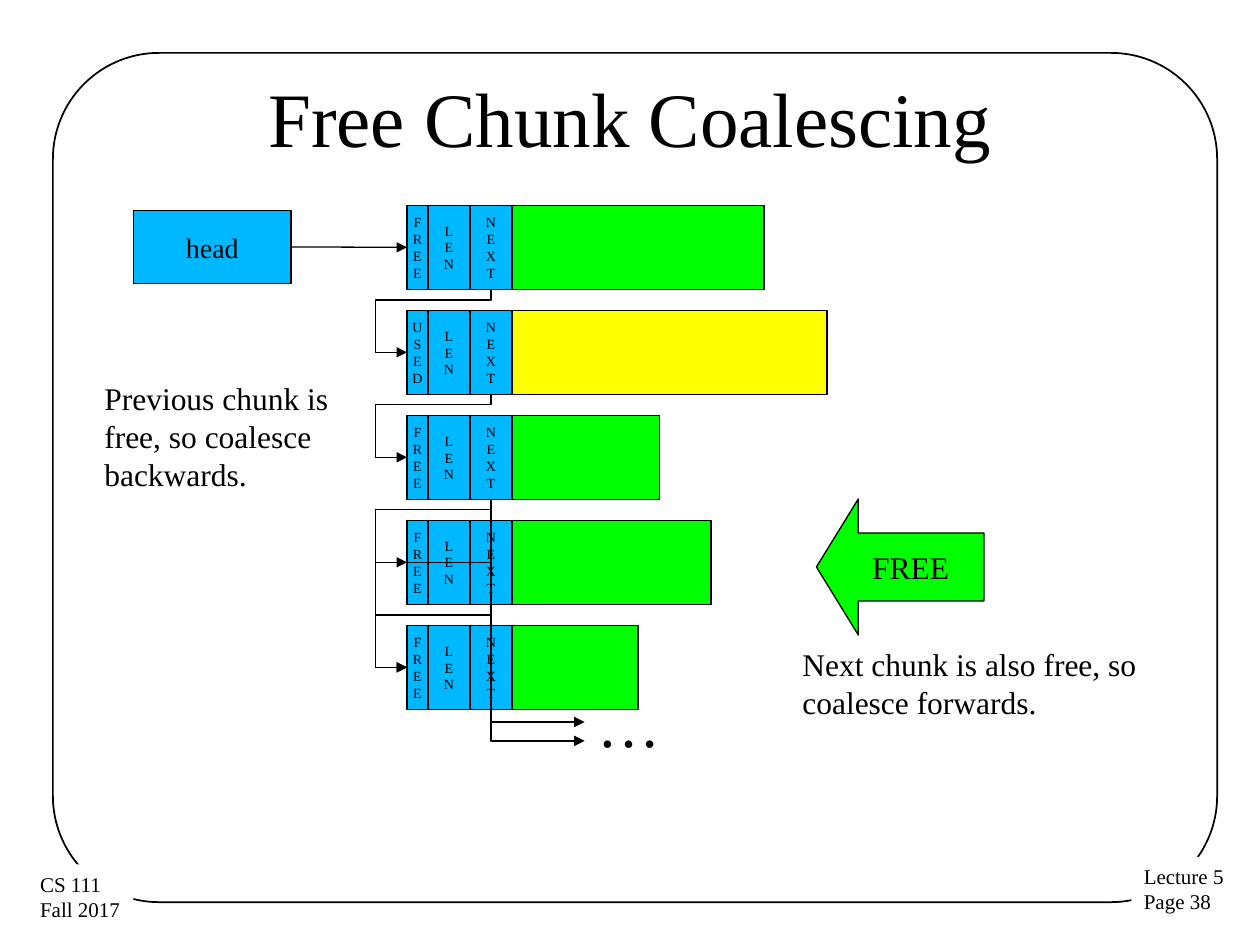
from lxml import etree
from pptx import Presentation
from pptx.dml.color import RGBColor
from pptx.enum.shapes import MSO_CONNECTOR as Link, MSO_SHAPE as Preset
from pptx.enum.text import MSO_ANCHOR as Anchor, PP_ALIGN as Align
from pptx.oxml.ns import qn
from pptx.util import Inches, Pt

COLORS = {"ink": "000000", "paper": "FFFFFF", "header": "00B8FF",
          "free": "00FF00", "used": "FFFF00"}
FONT = "Times New Roman"

deck = Presentation()
deck.slide_width, deck.slide_height = Inches(10), Inches(7.5)
page = deck.slides.add_slide(deck.slide_layouts[5])


def add_block(preset, bounds, fill, text="", size=8, align=Align.CENTER, line=0.75):
    """Add a shape with its text; fill or line may be None."""
    block = page.shapes.add_shape(preset, *map(Inches, bounds))
    block.shadow.inherit = False
    if fill:
        block.fill.solid()
        block.fill.fore_color.rgb = RGBColor.from_string(COLORS[fill])
    else:
        block.fill.background()
    if line:
        block.line.color.rgb = RGBColor.from_string(COLORS["ink"])
        block.line.width = Pt(line)
    else:
        block.line.fill.background()
    frame = block.text_frame
    frame.word_wrap = False
    frame.vertical_anchor = Anchor.MIDDLE
    frame.text = text
    for para in frame.paragraphs:
        para.alignment = align
        para.font.name, para.font.size = FONT, Pt(size)
        para.font.color.rgb = RGBColor.from_string(COLORS["ink"])
    return block


def finish_arrow(connector):
    """Give a connector a thin black line with an arrowhead and no shadow."""
    connector.line.color.rgb = RGBColor.from_string(COLORS["ink"])
    connector.line.width = Pt(0.75)
    properties = connector._element.spPr
    etree.SubElement(properties.find(qn("a:ln")), qn("a:tailEnd"), type="triangle")
    etree.SubElement(properties, qn("a:effectLst"))


# Page frame and corner labels
frame_shape = add_block(Preset.ROUNDED_RECTANGLE, (0.42, 0.42, 9.24, 6.74), None, line=1)
frame_shape.adjustments[0] = 0.125
for left, top, text in [(8.98, 6.8, "Lecture 5\nPage 38"), (0.22, 6.86, "CS 111\nFall 2017")]:
    add_block(Preset.RECTANGLE, (left, top, 0.84, 0.51), "paper", text, 12, Align.LEFT, None)

title = page.shapes.title
title.left, title.top, title.width, title.height = map(Inches, (0.5, 0.3, 9, 1.25))
title.text_frame.text = "Free Chunk Coalescing"
title.text_frame.vertical_anchor = Anchor.MIDDLE
title_para = title.text_frame.paragraphs[0]
title_para.alignment = Align.CENTER
title_para.font.name, title_para.font.size = FONT, Pt(44)
title_para.font.color.rgb = RGBColor.from_string(COLORS["ink"])

# Chunks: three header cells and a data area each
LEFT, TOP, HEIGHT, PITCH = 3.23, 1.63, 2 / 3, 5 / 6
chunks = [("FREE", 2), ("USED", 2.5), ("FREE", 1.17), ("FREE", 1.58), ("FREE", 1)]
status_cells = []
for row, (status, data_width) in enumerate(chunks):
    top = TOP + row * PITCH
    left = LEFT
    for word, width in [(status, 1 / 6), ("LEN", 1 / 3), ("NEXT", 1 / 3)]:
        cell = add_block(Preset.RECTANGLE, (left, top, width, HEIGHT), "header", "\n".join(word))
        if word == status:
            status_cells.append(cell)
        left += width
    add_block(Preset.RECTANGLE, (left, top, data_width, HEIGHT), status.lower())

head = add_block(Preset.RECTANGLE, (1.06, 1.67, 1.25, 0.58), "header", "head", 16)
head_arrow = page.shapes.add_connector(Link.STRAIGHT, 0, 0, 0, 0)
head_arrow.begin_connect(head, 3)
head_arrow.end_connect(status_cells[0], 1)
finish_arrow(head_arrow)

# Notes and the continuation dots
for bounds, text, size in [
    ((4.64, 5.38, 1.08, 0.7), "…", 36),
    ((0.73, 2.96, 2.05, 1.72), "Previous chunk is free, so coalesce backwards.", 18),
    ((6.27, 5.07, 2.86, 1.31), "Next chunk is also free, so coalesce forwards.", 18),
]:
    box = page.shapes.add_textbox(*map(Inches, bounds))
    box.text_frame.word_wrap = True
    box.text_frame.text = text
    para = box.text_frame.paragraphs[0]
    para.font.name, para.font.size = FONT, Pt(size)
    para.font.color.rgb = RGBColor.from_string(COLORS["ink"])

free_arrow = add_block(Preset.LEFT_ARROW, (6.48, 3.96, 1.33, 1.08), "free", "FREE", 18)
free_arrow.adjustments[1] = 0.308

# Next pointers: (start y, end x, end y, drop before turning left or None)
NEXT_X, DOTS_X = LEFT + 2 / 3, 4.64
bottoms = [TOP + row * PITCH + HEIGHT for row in range(len(chunks))]
middles = [TOP + row * PITCH + HEIGHT / 2 for row in range(len(chunks))]
pointers = [(bottoms[row], LEFT, middles[row + 1], 1 / 12) for row in range(4)]
pointers += [
    (bottoms[4], DOTS_X, 5.88, None),
    (bottoms[2], LEFT, middles[4], 0.5),
    (bottoms[2], DOTS_X, 5.73, None),
]
for start_y, end_x, end_y, drop in pointers:
    # A quarter turn swaps the width and height about the same centre
    across, down = abs(end_x - NEXT_X), end_y - start_y
    left = (NEXT_X + end_x - down) / 2
    top = (start_y + end_y - across) / 2
    elbow = page.shapes.add_connector(
        Link.ELBOW, *map(Inches, (left, top, left + down, top + across)))
    transform = elbow._element.spPr.find(qn("a:xfrm"))
    geometry = elbow._element.spPr.find(qn("a:prstGeom"))
    if drop is None:
        transform.set("rot", "16200000")
        transform.set("flipH", "1")
        geometry.set("prst", "bentConnector2")
    else:
        transform.set("rot", "5400000")
        geometry.set("prst", "bentConnector4")
        guides = geometry.find(qn("a:avLst"))
        for name, ratio in [("adj1", drop / down), ("adj2", 1 + 0.25 / across)]:
            etree.SubElement(guides, qn("a:gd"), name=name, fmla=f"val {round(ratio * 100000)}")
    finish_arrow(elbow)

deck.save("out.pptx")
